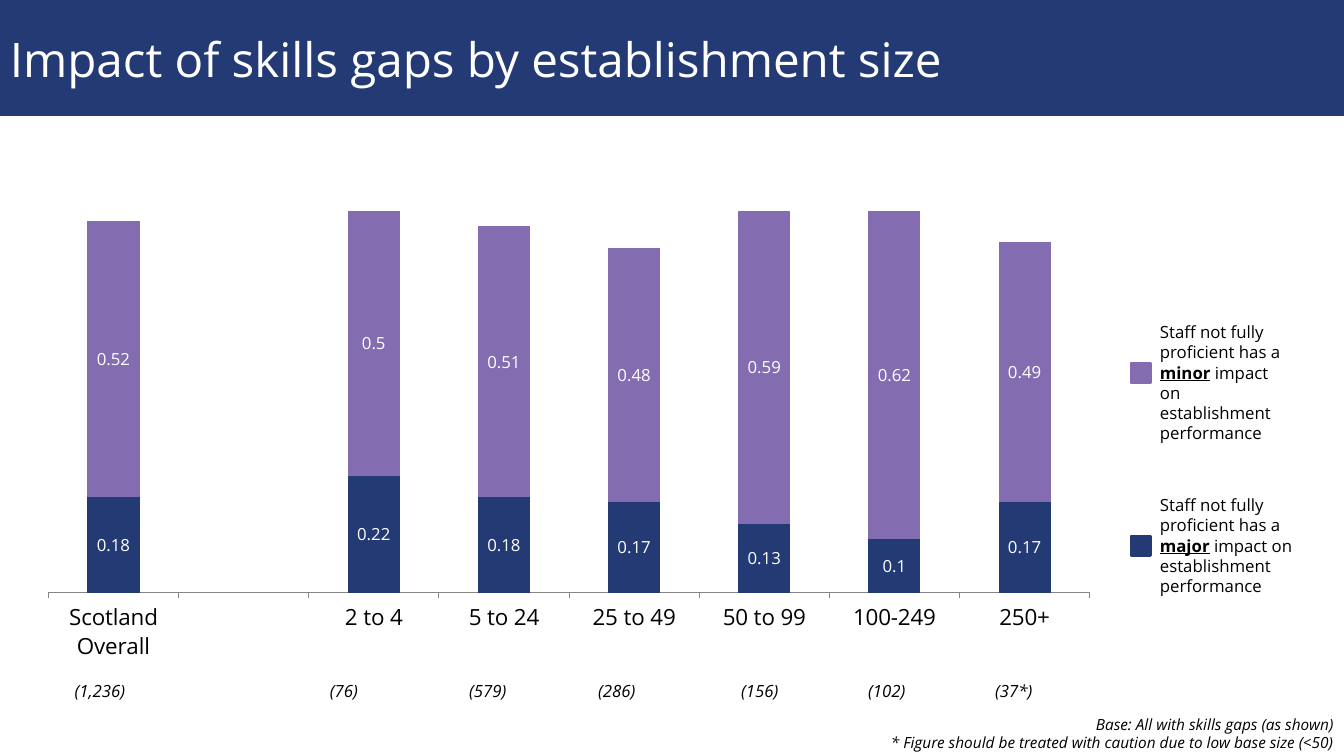
from lxml import etree
from pptx import Presentation
from pptx.chart.data import CategoryChartData
from pptx.dml.color import RGBColor
from pptx.enum.chart import XL_CHART_TYPE, XL_LABEL_POSITION, XL_TICK_MARK
from pptx.enum.shapes import MSO_SHAPE
from pptx.enum.text import MSO_ANCHOR, PP_ALIGN
from pptx.oxml.ns import qn
from pptx.util import Pt

PX = 914400 / 100.8
FONT = "Open Sans"
NAVY = RGBColor(0x23, 0x3A, 0x75)
PURPLE = RGBColor(0x83, 0x6D, 0xB0)
BLACK = RGBColor(0, 0, 0)
WHITE = RGBColor(0xFF, 0xFF, 0xFF)
GREY = RGBColor(0x86, 0x86, 0x86)
RECT = MSO_SHAPE.RECTANGLE
STACKED = XL_CHART_TYPE.COLUMN_STACKED
CENTER = XL_LABEL_POSITION.CENTER
OUT, NO_TICK = XL_TICK_MARK.OUTSIDE, XL_TICK_MARK.NONE
LEFT, RIGHT = PP_ALIGN.LEFT, PP_ALIGN.RIGHT
TOP, MIDDLE = MSO_ANCHOR.TOP, MSO_ANCHOR.MIDDLE

SIZES = ["Scotland Overall", "", "2 to 4", "5 to 24", "25 to 49",
         "50 to 99", "100-249", "250+"]
MAJOR = [0.18, None, 0.22, 0.18, 0.17, 0.13, 0.1, 0.17]
MINOR = [0.52, None, 0.5, 0.51, 0.48, 0.59, 0.62, 0.49]
BASES = [(100, "(1,236)"), (344, "(76)"), (488, "(579)"), (617, "(286)"),
         (760, "(156)"), (887, "(102)"), (1014, "(37*)")]
NOTES = ["Base: All with skills gaps (as shown)",
         "* Figure should be treated with caution due to low base size (<50)"]
PLOT = {"x": 0.02, "y": 0.03, "w": 0.82, "h": 0.84}
INSET = 10


def px(*values):
    """Turn pixel lengths into EMU."""
    return [round(value * PX) for value in values]


def style(font, size, color, italic=False):
    """Set the face, size and colour of a font."""
    font.name = FONT
    font.size = Pt(size)
    font.color.rgb = color
    font.italic = italic


def write(frame, lines, size=12, color=BLACK, italic=False, align=LEFT,
          anchor=TOP):
    """Fill a frame with lines made of (text, strong) runs."""
    frame.word_wrap = True
    frame.vertical_anchor = anchor
    for i, line in enumerate(lines):
        para = frame.add_paragraph() if i else frame.paragraphs[0]
        para.alignment = align
        for text, strong in line:
            run = para.add_run()
            run.text = text
            style(run.font, size, color, italic)
            run.font.bold = run.font.underline = strong


def add_text(slide, box, lines, **form):
    """Add a text box and return its frame."""
    frame = slide.shapes.add_textbox(*px(*box)).text_frame
    write(frame, lines, **form)
    return frame


def add_block(slide, box, color):
    """Add a plain filled rectangle."""
    block = slide.shapes.add_shape(RECT, *px(*box))
    block.shadow.inherit = False
    block.fill.solid()
    block.fill.fore_color.rgb = color
    block.line.color.rgb = color
    block.line.width = Pt(2)
    return block


def add_title(slide, text):
    """Add the title band across the top."""
    band = add_block(slide, (0, 0, 1344, 116), NAVY)
    band.line.fill.background()
    write(band.text_frame, [[(text, False)]], size=34, color=WHITE,
          anchor=MIDDLE)


def set_plot(chart):
    """Fix the inner plot area within the chart."""
    area = chart.plots[0]._element.getparent()
    old = area.find(qn("c:layout"))
    if old is not None:
        area.remove(old)
    layout = etree.Element(qn("c:layout"))
    area.insert(0, layout)
    manual = etree.SubElement(layout, qn("c:manualLayout"))
    marks = {"layoutTarget": "inner", "xMode": "edge", "yMode": "edge"}
    for key, value in (marks | PLOT).items():
        etree.SubElement(manual, qn("c:" + key)).set("val", str(value))


def add_bars(slide):
    """Add the stacked column chart."""
    data = CategoryChartData()
    data.categories = SIZES
    data.add_series("Series 1", MAJOR)
    data.add_series("Series 2", MINOR)
    chart = slide.shapes.add_chart(STACKED, *px(23, 153, 1270, 508), data).chart
    chart.has_legend = chart.has_title = False
    style(chart.font, 18, BLACK)
    plot = chart.plots[0]
    plot.gap_width, plot.overlap = 150, 100
    plot.vary_by_categories = False
    for series, color in zip(plot.series, (NAVY, PURPLE)):
        series.format.fill.solid()
        series.format.fill.fore_color.rgb = color
        labels = series.data_labels
        labels.show_value = True
        labels.position = CENTER
        style(labels.font, 12, WHITE)
    axis = chart.category_axis
    axis.major_tick_mark, axis.minor_tick_mark = OUT, NO_TICK
    axis.format.line.color.rgb = GREY
    style(axis.tick_labels.font, 16, BLACK)
    scale = chart.value_axis
    scale.minimum_scale, scale.maximum_scale = 0, 0.8
    scale.has_major_gridlines = False
    scale.visible = False
    set_plot(chart)


def add_bases(slide):
    """Add the row of base sizes on centred tab stops."""
    text = "".join("\t" + base for _, base in BASES)
    frame = add_text(slide, (0, 676, 1120, 31), [[(text, False)]], italic=True)
    props = frame.paragraphs[0]._p.get_or_add_pPr()
    stops = etree.SubElement(props, qn("a:tabLst"))
    for mid, _ in BASES:
        stop = etree.SubElement(stops, qn("a:tab"))
        stop.set("pos", str(px(mid - INSET)[0]))
        stop.set("algn", "ctr")


def add_key(slide, top, word, color):
    """Add one legend swatch with its label."""
    add_block(slide, (1131, top + 46, 20, 20), color)
    line = [("Staff not fully proficient has a ", False), (word, True),
            (" impact on establishment performance", False)]
    add_text(slide, (1150, top, 153, 112), [line])


def main():
    """Build the slide and save it."""
    deck = Presentation()
    deck.slide_width, deck.slide_height = px(1344, 756)
    slide = deck.slides.add_slide(deck.slide_layouts[6])
    add_title(slide, "Impact of skills gaps by establishment size")
    add_bars(slide)
    add_bases(slide)
    add_text(slide, (820, 710, 524, 46), [[(note, False)] for note in NOTES],
             size=11, italic=True, align=RIGHT)
    add_key(slide, 490, "major", NAVY)
    add_key(slide, 317, "minor", PURPLE)
    deck.save("out.pptx")


if __name__ == "__main__":
    main()
